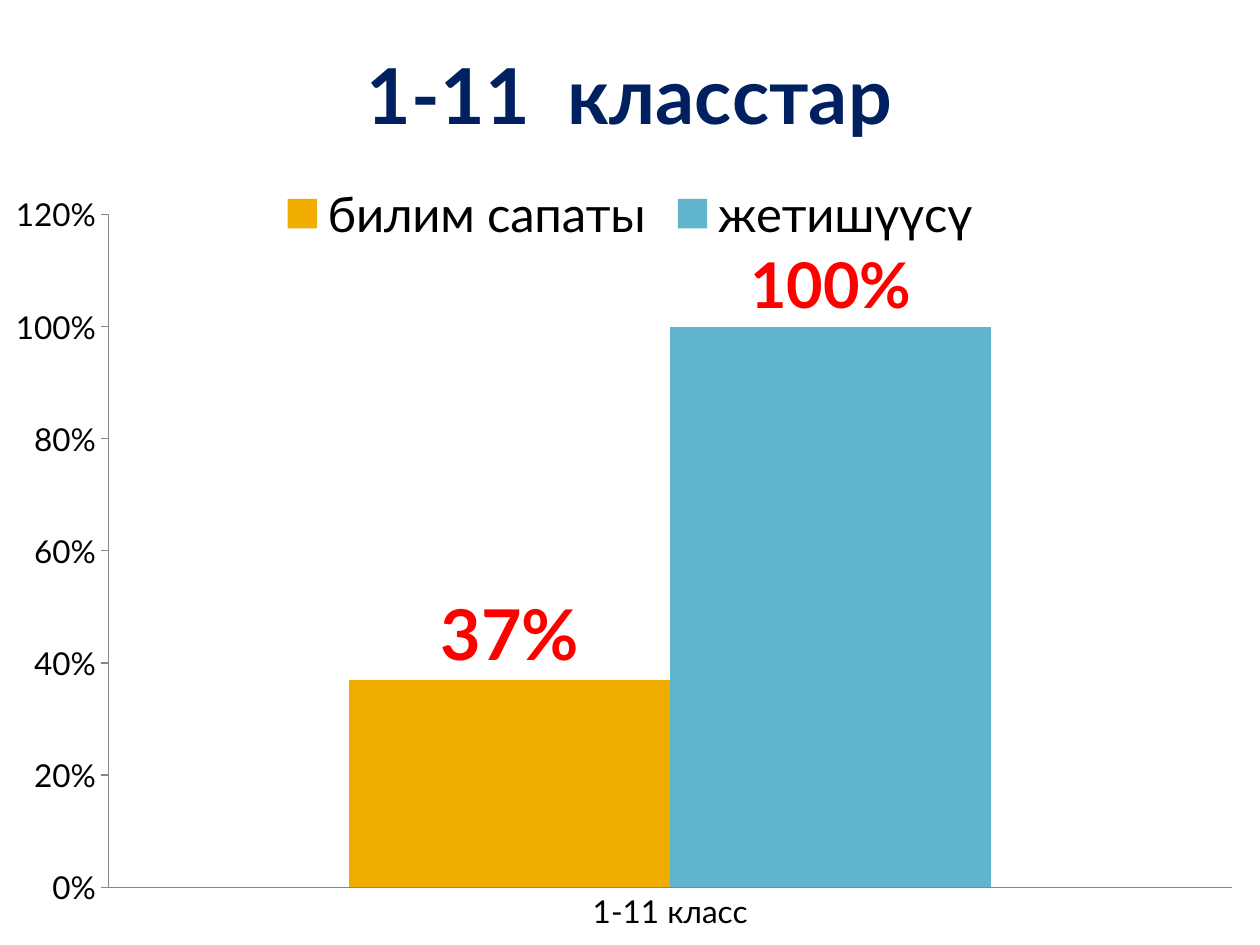
from lxml.etree import SubElement
from pptx import Presentation
from pptx.chart.data import CategoryChartData as ChartData
from pptx.dml.color import RGBColor
from pptx.enum.chart import XL_CHART_TYPE as ChartType
from pptx.enum.chart import XL_LABEL_POSITION as LabelPosition
from pptx.enum.chart import XL_LEGEND_POSITION as LegendPosition
from pptx.enum.chart import XL_TICK_MARK as TickMark
from pptx.oxml.ns import qn
from pptx.util import Pt

FONT = "Lato"
TITLE = "1-11  класстар"
CATEGORY = "1-11 класс"
# name, value, bar colour, label size
SERIES = [
    ("билим сапаты", 0.37, "F0AD00", 40),
    ("жетишүүсү", 1, "60B5CC", 36),
]
PLOT_AREA = {"x": 0.086, "y": 0.227, "w": 0.892, "h": 0.712}


def colour(value):
    return RGBColor.from_string(value)


def format_font(font, size, hex_colour="000000", bold=False):
    values = {"name": FONT, "size": Pt(size), "bold": bold}
    for name, value in values.items():
        setattr(font, name, value)
    font.color.rgb = colour(hex_colour)


def place_plot_area(chart, fractions):
    """Fix the inner plot area, in fractions of the chart."""
    plot_area = chart._chartSpace.chart.plotArea
    for old in plot_area.findall(qn("c:layout")):
        plot_area.remove(old)
    layout = SubElement(plot_area, qn("c:layout"))
    plot_area.insert(0, layout)
    manual = SubElement(layout, qn("c:manualLayout"))
    settings = {"layoutTarget": "inner", "xMode": "edge", "yMode": "edge", **fractions}
    for name, value in settings.items():
        SubElement(manual, qn(f"c:{name}")).set("val", str(value))


def format_axes(chart):
    value_axis, category_axis = chart.value_axis, chart.category_axis
    scale = {
        "minimum_scale": 0,
        "maximum_scale": 1.2,
        "major_unit": 0.2,
        "has_major_gridlines": False,
    }
    for name, value in scale.items():
        setattr(value_axis, name, value)
    value_axis.tick_labels.number_format = "0%"
    value_axis.tick_labels.number_format_is_linked = False
    for axis, tick in ((value_axis, TickMark.OUTSIDE), (category_axis, TickMark.NONE)):
        axis.major_tick_mark = tick
        axis.minor_tick_mark = TickMark.NONE
        axis.format.line.color.rgb = colour("868686")
        axis.format.line.width = Pt(0.75)
        format_font(axis.tick_labels.font, 18)


def format_series(series, fill, label_size):
    series.format.fill.solid()
    series.format.fill.fore_color.rgb = colour(fill)
    labels = series.data_labels
    values = {
        "show_value": True,
        "number_format": "0%",
        "number_format_is_linked": False,
        "position": LabelPosition.OUTSIDE_END,
    }
    for name, value in values.items():
        setattr(labels, name, value)
    format_font(labels.font, label_size, "FF0000", True)


def add_results_chart(page, left, top, width, height):
    data = ChartData(number_format="0%")
    data.categories = [CATEGORY]
    for name, value, _, _ in SERIES:
        data.add_series(name, [value])
    chart = page.shapes.add_chart(
        ChartType.COLUMN_CLUSTERED, Pt(left), Pt(top), Pt(width), Pt(height), data
    ).chart
    format_font(chart.font, 18)

    chart.has_title = True
    para = chart.chart_title.text_frame.paragraphs[0]
    span = para.add_run()
    span.text = TITLE
    format_font(span.font, 44, "002060", True)
    chart.chart_title.include_in_layout = False

    chart.has_legend = True
    chart.legend.position = LegendPosition.TOP
    chart.legend.include_in_layout = False
    format_font(chart.legend.font, 28)

    format_axes(chart)
    plot = chart.plots[0]
    plot.gap_width, plot.overlap, plot.vary_by_categories = 150, 0, False
    for series, (_, _, fill, label_size) in zip(plot.series, SERIES):
        format_series(series, fill, label_size)
    place_plot_area(chart, PLOT_AREA)


def main():
    deck = Presentation()
    deck.slide_width, deck.slide_height = Pt(720), Pt(540)
    page = deck.slides.add_slide(deck.slide_layouts[6])
    add_results_chart(page, 0, 0, 720, 540)
    deck.save("out.pptx")


if __name__ == "__main__":
    main()
